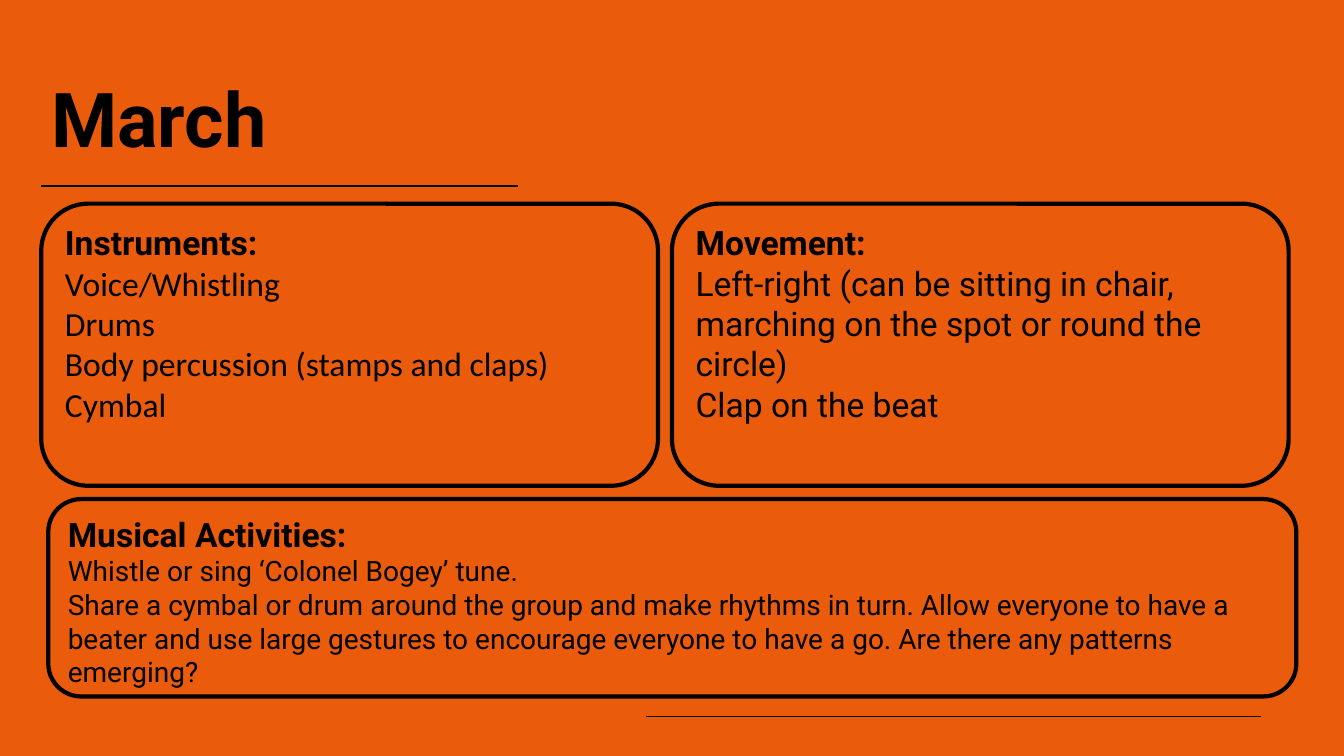
"""Build the March music session slide."""
from lxml.etree import SubElement
from pptx import Presentation
from pptx.dml.color import RGBColor
from pptx.enum.shapes import MSO_CONNECTOR as CONN, MSO_SHAPE as SHAPE
from pptx.enum.text import MSO_ANCHOR as ANCHOR, PP_ALIGN as ALIGN
from pptx.oxml.ns import qn
from pptx.util import Pt

BLACK, ORANGE = "000000", "EA5B0C"
TITLE = "March"
PANELS = [
    ("Musical Activities:", [
        "Whistle or sing ‘Colonel Bogey’ tune.",
        "Share a cymbal or drum around the group and make rhythms in turn. "
        "Allow everyone to have a beater and use large gestures to encourage "
        "everyone to have a go. Are there any patterns emerging?",
    ], (34.5, 356.5, 891.5, 141), "Roboto", 20),
    ("Instruments:", [
        "Voice/Whistling", "Drums", "Body percussion (stamps and claps)", "Cymbal",
    ], (29.5, 145.5, 440.5, 201.5), "Calibri", 24),
    ("Movement:", [
        "Left-right (can be sitting in chair, marching on the spot or round the circle)",
        "Clap on the beat",
    ], (480, 145.5, 440.5, 201.5), "Roboto", 24),
]
RULES = [(461.5, 900.5, 512), (29.5, 370, 133)]


def paint(color, value):
    color.rgb = RGBColor.from_string(value)


def set_font(p, name, size, bold):
    p.alignment = ALIGN.LEFT
    p.font.name, p.font.size, p.font.bold = name, Pt(size), bold
    paint(p.font.color, BLACK)


def add_rule(slide, left, right, y):
    line = slide.shapes.add_connector(CONN.STRAIGHT, Pt(left), Pt(y), Pt(right), Pt(y))
    line.line.width = Pt(1)
    paint(line.line.color, BLACK)
    SubElement(line._element.spPr, qn("a:effectLst"))


def add_title(slide):
    tf = slide.shapes.add_textbox(Pt(29.5), Pt(55.5), Pt(535), Pt(90.5)).text_frame
    tf.word_wrap = True
    tf.vertical_anchor = ANCHOR.TOP
    p = tf.paragraphs[0]
    p.text, p.line_spacing = TITLE, 0.9
    set_font(p, "Roboto", 54, True)


def add_panel(slide, heading, items, box, font, size):
    sp = slide.shapes.add_shape(SHAPE.ROUNDED_RECTANGLE, *map(Pt, box))
    sp.shadow.inherit = False
    sp.fill.background()
    sp.line.width = Pt(3)
    paint(sp.line.color, BLACK)
    tf = sp.text_frame
    tf.word_wrap = True
    tf.vertical_anchor = ANCHOR.TOP
    p = tf.paragraphs[0]
    p.text = heading
    set_font(p, "Roboto", 24, True)
    for item in items:
        p = tf.add_paragraph()
        p.text = item
        set_font(p, font, size, False)


def main():
    prs = Presentation()
    prs.slide_width, prs.slide_height = Pt(960), Pt(540)
    slide = prs.slides.add_slide(prs.slide_layouts[6])
    fill = slide.background.fill
    fill.solid()
    paint(fill.fore_color, ORANGE)
    for rule in RULES:
        add_rule(slide, *rule)
    add_title(slide)
    for panel in PANELS:
        add_panel(slide, *panel)
    prs.save("out.pptx")


if __name__ == "__main__":
    main()
